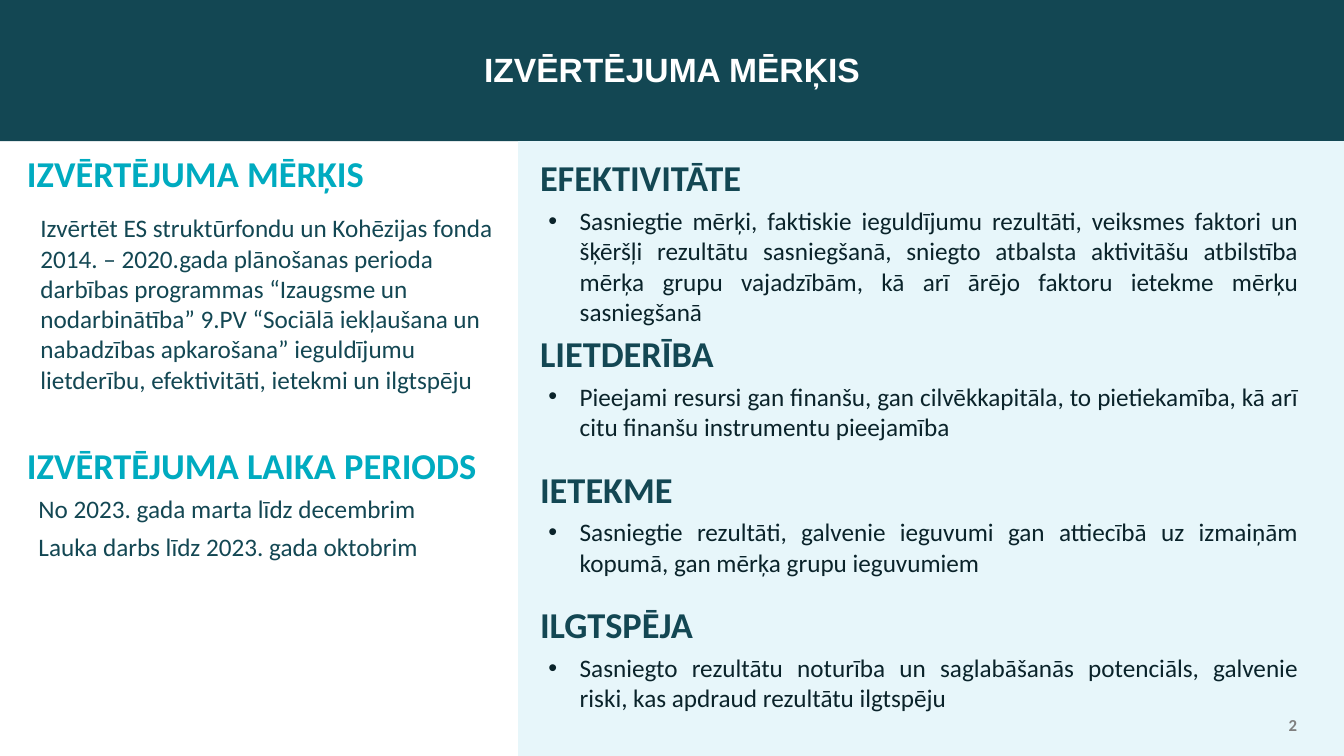
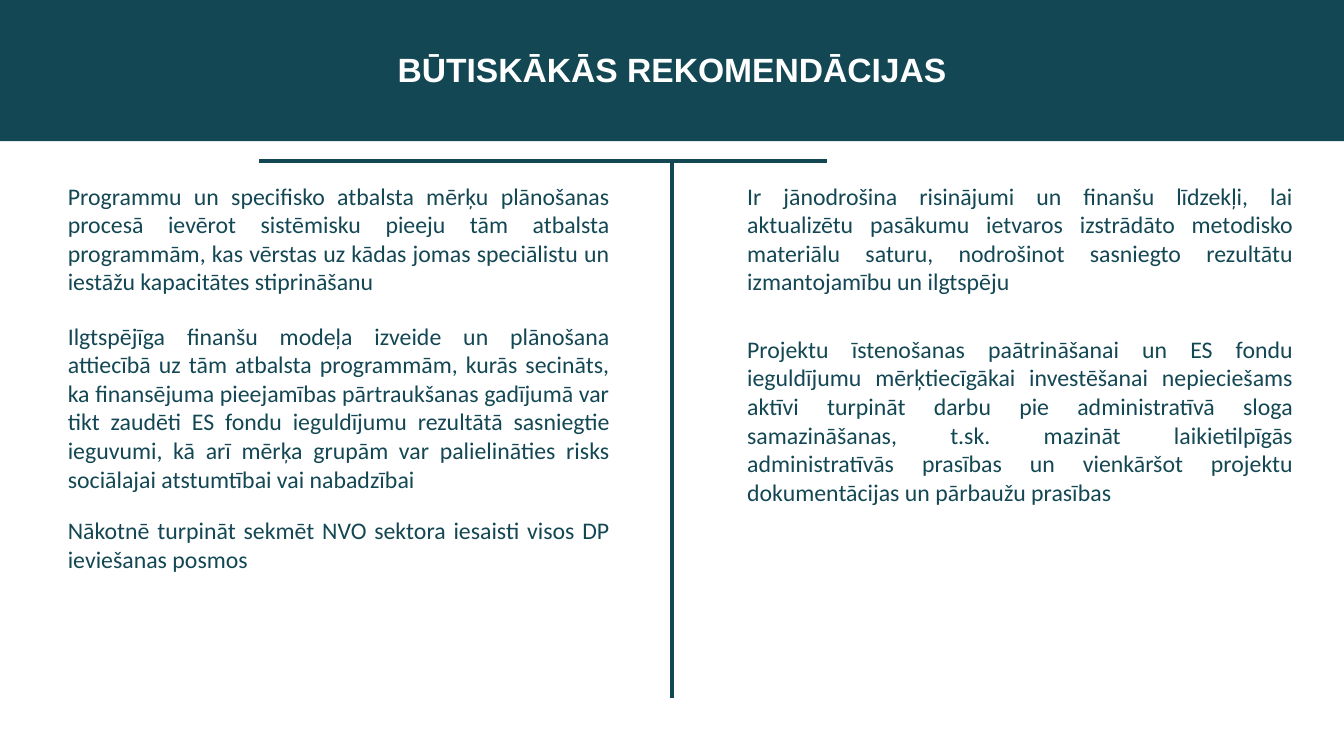
from dataclasses import dataclass

from lxml.etree import SubElement
from pptx import Presentation
from pptx.dml.color import RGBColor
from pptx.enum.shapes import MSO_CONNECTOR, MSO_SHAPE
from pptx.enum.text import MSO_ANCHOR, MSO_AUTO_SIZE, PP_ALIGN
from pptx.oxml.ns import qn
from pptx.util import Cm, Pt

TEAL = RGBColor(0x13, 0x47, 0x53)
TURQUOISE = RGBColor(0x00, 0xAB, 0xC0)
INK = RGBColor(0x0A, 0x23, 0x2A)
PALE = RGBColor(0xE7, 0xF6, 0xFA)
GREY = RGBColor(0x7F, 0x7F, 0x7F)
WHITE = RGBColor(0xFF, 0xFF, 0xFF)

TITLE_FONT = "Arial"
BODY_FONT = "Calibri"

# All lengths are in centimetres.
PAGE_WIDTH, PAGE_HEIGHT = 33.87, 19.05
BAND_TOP, BAND_HEIGHT = -0.1, 3.66
BAND_BOTTOM = BAND_TOP + BAND_HEIGHT
HEADING_HEIGHT = 1.42
TEXT_INDENT = 0.64
BULLET_INDENT = 0.79

CRITERIA = [
    (0.2, 2.8, "EFEKTIVITĀTE",
     "Sasniegtie mērķi, faktiskie ieguldījumu rezultāti, veiksmes faktori un "
     "šķēršļi rezultātu sasniegšanā, sniegto atbalsta aktivitāšu atbilstība "
     "mērķa grupu vajadzībām, kā arī ārējo faktoru ietekme mērķu sasniegšanā"),
    (4.62, 1.98, "LIETDERĪBA",
     "Pieejami resursi gan finanšu, gan cilvēkkapitāla, to pietiekamība, "
     "kā arī citu finanšu instrumentu pieejamība"),
    (8.04, 1.98, "IETEKME",
     "Sasniegtie rezultāti, galvenie ieguvumi gan attiecībā uz izmaiņām "
     "kopumā, gan mērķa grupu ieguvumiem"),
    (11.46, 1.98, "ILGTSPĒJA",
     "Sasniegto rezultātu noturība un saglabāšanās potenciāls, galvenie "
     "riski, kas apdraud rezultātu ilgtspēju"),
]

PURPOSE = (
    "Izvērtēt ES struktūrfondu un Kohēzijas fonda 2014. – 2020.gada plānošanas "
    "perioda darbības programmas “Izaugsme un nodarbinātība” 9.PV “Sociālā "
    "iekļaušana un nabadzības apkarošana” ieguldījumu lietderību, "
    "efektivitāti, ietekmi un ilgtspēju")
PERIOD = ["No 2023. gada marta līdz decembrim",
          "Lauka darbs līdz 2023. gada oktobrim"]

LEFT_RECOMMENDATIONS = [
    (0, 3.07,
     "Programmu un specifisko atbalsta mērķu plānošanas procesā ievērot "
     "sistēmisku pieeju tām atbalsta programmām, kas vērstas uz kādas jomas "
     "speciālistu un iestāžu kapacitātes stiprināšanu"),
    (3.53, 4.47,
     "Ilgtspējīga finanšu modeļa izveide un plānošana attiecībā uz tām "
     "atbalsta programmām, kurās secināts, ka finansējuma pieejamības "
     "pārtraukšanas gadījumā var tikt zaudēti ES fondu ieguldījumu rezultātā "
     "sasniegtie ieguvumi, kā arī mērķa grupām var palielināties risks "
     "sociālajai atstumtībai vai nabadzībai"),
    (8.43, 2.18,
     "Nākotnē turpināt sekmēt NVO sektora iesaisti visos DP ieviešanas posmos"),
]
RIGHT_RECOMMENDATIONS = [
    (0, 3.66,
     "Ir jānodrošina risinājumi un finanšu līdzekļi, lai aktualizētu pasākumu "
     "ietvaros izstrādāto metodisko materiālu saturu, nodrošinot sasniegto "
     "rezultātu izmantojamību un ilgtspēju"),
    (3.86, 3.2,
     "Projektu īstenošanas paātrināšanai un ES fondu ieguldījumu "
     "mērķtiecīgākai investēšanai nepieciešams aktīvi turpināt darbu pie "
     "administratīvā sloga samazināšanas, t.sk. mazināt laikietilpīgās "
     "administratīvās prasības un vienkāršot projektu dokumentācijas un "
     "pārbaužu prasības"),
]


@dataclass
class Box:
    left: float
    top: float
    width: float
    height: float

    def inner(self, left, top, width, height):
        """Return a box whose corner is measured from this box's corner."""
        return Box(self.left + left, self.top + top, width, height)

    def lengths(self):
        return Cm(self.left), Cm(self.top), Cm(self.width), Cm(self.height)


def style(para, size, color, bold=False, font=BODY_FONT):
    para.font.name = font
    para.font.size = Pt(size)
    para.font.bold = bold
    para.font.color.rgb = color


def add_text(page, box, lines, size, color, bold=False, align=PP_ALIGN.LEFT,
             margins=(0, 0), anchor=MSO_ANCHOR.TOP, bullet=False):
    """Add a text box; margins are the horizontal and the vertical inset."""
    frame = page.shapes.add_textbox(*box.lengths()).text_frame
    frame.word_wrap = True
    frame.vertical_anchor = anchor
    frame.margin_left = frame.margin_right = Cm(margins[0])
    frame.margin_top = frame.margin_bottom = Cm(margins[1])
    for index, line in enumerate(lines):
        para = frame.paragraphs[0] if index == 0 else frame.add_paragraph()
        para.text = line
        para.alignment = align
        if index:
            para.space_before = Pt(6)
        if bullet:
            add_bullet(para)
        style(para, size, color, bold)


def add_bullet(para):
    properties = para._p.get_or_add_pPr()
    properties.set("marL", str(Cm(BULLET_INDENT)))
    properties.set("indent", str(-Cm(BULLET_INDENT)))
    SubElement(properties, qn("a:buFont"), typeface="Arial")
    SubElement(properties, qn("a:buChar"), char="•")


def add_heading(page, box, text, color):
    add_text(page, box, [text], 26, color, bold=True,
             margins=(0.25, 0.13), anchor=MSO_ANCHOR.MIDDLE)


def add_body(page, box, lines, size, align=PP_ALIGN.LEFT):
    """Add teal text set in from the left edge of the box."""
    indented = box.inner(TEXT_INDENT, 0, box.width - TEXT_INDENT, box.height)
    add_text(page, indented, lines, size, TEAL, align=align)


def add_page(deck, title):
    """Add a title-only slide whose title is the dark band."""
    page = deck.slides.add_slide(deck.slide_layouts[5])
    band = page.shapes.title
    band.left, band.top, band.width, band.height = Box(
        0, BAND_TOP, PAGE_WIDTH, BAND_HEIGHT).lengths()
    band.fill.solid()
    band.fill.fore_color.rgb = TEAL
    frame = band.text_frame
    frame.text = title
    frame.auto_size = MSO_AUTO_SIZE.NONE
    frame.vertical_anchor = MSO_ANCHOR.MIDDLE
    para = frame.paragraphs[0]
    para.alignment = PP_ALIGN.CENTER
    style(para, 24, WHITE, bold=True, font=TITLE_FONT)
    return page


def add_page_number(page, number):
    add_text(page, Box(31.01, 17.75, 1.93, 1.02), [str(number)], 12, GREY,
             bold=True, align=PP_ALIGN.RIGHT, margins=(0.25, 0.13),
             anchor=MSO_ANCHOR.MIDDLE)


def add_purpose_column(page, box):
    add_heading(page, box.inner(0.43, 0.08, 12.2, HEADING_HEIGHT),
                "IZVĒRTĒJUMA MĒRĶIS", TURQUOISE)
    add_body(page, box.inner(0.38, 1.8, 12.1, 4.85), [PURPOSE], 18)
    add_heading(page, box.inner(0.43, 7.44, 12.2, HEADING_HEIGHT),
                "IZVĒRTĒJUMA LAIKA PERIODS", TURQUOISE)
    add_body(page, box.inner(0.33, 8.86, 12.1, 2.36), PERIOD, 18)


def add_criteria_panel(page, box):
    panel = page.shapes.add_shape(MSO_SHAPE.RECTANGLE, *box.lengths())
    panel.shadow.inherit = False
    panel.fill.solid()
    panel.fill.fore_color.rgb = PALE
    panel.line.fill.background()
    for top, height, heading, text in CRITERIA:
        add_heading(page, box.inner(0.3, top, 14.45, HEADING_HEIGHT),
                    heading, TEAL)
        add_text(page, box.inner(0.76, top + HEADING_HEIGHT, 18.9, height),
                 [text], 18, INK, align=PP_ALIGN.JUSTIFY, bullet=True)


def add_recommendations(page, box, items):
    for top, height, text in items:
        add_body(page, box.inner(0, top, box.width, height), [text], 17,
                 align=PP_ALIGN.JUSTIFY)


def add_rule(page, start_x, start_y, end_x, end_y):
    rule = page.shapes.add_connector(
        MSO_CONNECTOR.STRAIGHT, Cm(start_x), Cm(start_y), Cm(end_x), Cm(end_y))
    rule.line.color.rgb = TEAL
    rule.line.width = Pt(3)
    SubElement(rule._element.spPr, qn("a:effectLst"))


def add_purpose_slide(deck):
    page = add_page(deck, "IZVĒRTĒJUMA MĒRĶIS")
    split = 13.06
    height = PAGE_HEIGHT - BAND_BOTTOM
    add_purpose_column(page, Box(0, BAND_BOTTOM, split, height))
    add_criteria_panel(
        page, Box(split, BAND_BOTTOM, PAGE_WIDTH - split, height))
    add_page_number(page, 2)


def add_recommendations_slide(deck):
    page = add_page(deck, "BŪTISKĀKĀS REKOMENDĀCIJAS")
    add_recommendations(page, Box(1.07, 4.57, 14.3, 11), LEFT_RECOMMENDATIONS)
    add_recommendations(page, Box(18.19, 4.57, 14.4, 11), RIGHT_RECOMMENDATIONS)
    middle = PAGE_WIDTH / 2
    add_rule(page, 20.83, 4.06, 6.53, 4.06)
    add_rule(page, middle, 4.11, middle, 17.58)


def main():
    deck = Presentation()
    deck.slide_width, deck.slide_height = Cm(PAGE_WIDTH), Cm(PAGE_HEIGHT)
    add_purpose_slide(deck)
    add_recommendations_slide(deck)
    deck.save("out.pptx")


if __name__ == "__main__":
    main()
